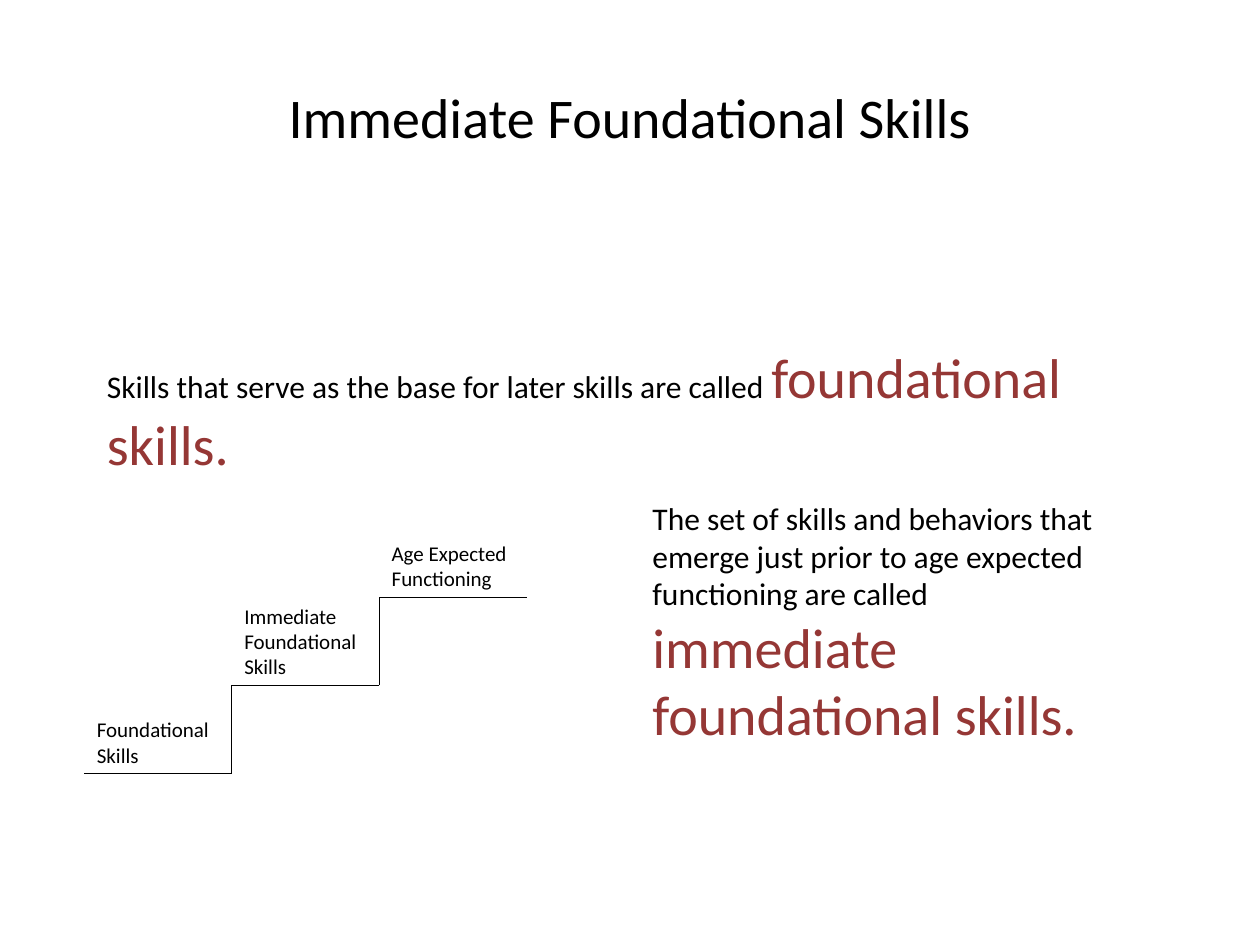
"""Build the slide that explains immediate foundational skills as a staircase."""
from dataclasses import dataclass

import lxml.etree
import pptx
import pptx.dml.color
import pptx.enum.shapes
import pptx.enum.text
import pptx.oxml.ns
import pptx.slide
import pptx.text.text
import pptx.util

Inches = pptx.util.Inches
Pt = pptx.util.Pt
Anchor = pptx.enum.text.MSO_ANCHOR

FONT = "Calibri"
COLORS = {"text": "000000", "term": "953735", "line": "000000"}
STAIR_LEFT, STAIR_BOTTOM = 0.67, 6.14
TREAD, RISER = 1.17, 0.7
LABEL_WIDTH = 1.25


@dataclass(frozen=True)
class Definition:
    left: float
    top: float
    width: float
    height: float
    lead: str
    term: str


STEPS = [
    ["Foundational Skills"],
    ["Immediate", "Foundational Skills"],
    ["Age Expected", "Functioning"],
]
DEFINITIONS = [
    Definition(0.75, 2.67, 7.83, 1.04,
               "Skills that serve as the base for later skills are called ",
               "foundational skills."),
    Definition(5.08, 3.91, 4.17, 2.79,
               "The set of skills and behaviors that emerge just prior to "
               "age expected functioning are called ",
               "immediate foundational skills."),
]


def rgb(name: str) -> pptx.dml.color.RGBColor:
    """Look up a colour by its role."""
    return pptx.dml.color.RGBColor.from_string(COLORS[name])


def style(font: pptx.text.text.Font, size: int, color: str = "text") -> None:
    """Set typeface, size and colour."""
    font.name = FONT
    font.size = Pt(size)
    font.color.rgb = rgb(color)


def add_frame(slide: pptx.slide.Slide, left: float, top: float, width: float,
              height: float, anchor: Anchor) -> pptx.text.text.TextFrame:
    """Add a wrapping text box and return its frame."""
    frame = slide.shapes.add_textbox(
        Inches(left), Inches(top), Inches(width), Inches(height)).text_frame
    frame.word_wrap = True
    frame.vertical_anchor = anchor
    return frame


def add_title(slide: pptx.slide.Slide, title: str) -> None:
    """Add the centred heading."""
    heading = add_frame(slide, 0.5, 0.3, 9, 1.25, Anchor.MIDDLE).paragraphs[0]
    heading.text = title
    heading.alignment = pptx.enum.text.PP_ALIGN.CENTER
    style(heading.font, 32)


def add_line(slide: pptx.slide.Slide, x1: float, y1: float,
             x2: float, y2: float) -> None:
    """Draw one edge of the staircase."""
    edge = slide.shapes.add_connector(
        pptx.enum.shapes.MSO_CONNECTOR.STRAIGHT,
        Inches(x1), Inches(y1), Inches(x2), Inches(y2))
    edge.line.color.rgb = rgb("line")
    edge.line.width = Pt(0.75)
    lxml.etree.SubElement(edge._element.spPr, pptx.oxml.ns.qn("a:effectLst"))


def add_step(slide: pptx.slide.Slide, index: int, label: list[str]) -> None:
    """Draw a tread, the riser leading up to it, and the label standing on it."""
    left = STAIR_LEFT + index * TREAD
    level = STAIR_BOTTOM - index * RISER
    add_line(slide, left, level, left + TREAD, level)
    if index:
        add_line(slide, left, level + RISER, left, level)
    frame = add_frame(slide, left, level - RISER, LABEL_WIDTH, RISER, Anchor.BOTTOM)
    frame.text = "\n".join(label)
    for paragraph in frame.paragraphs:
        style(paragraph.font, 12)


def add_definition(slide: pptx.slide.Slide, definition: Definition) -> None:
    """Add a sentence that ends in an emphasised term."""
    sentence = add_frame(slide, definition.left, definition.top, definition.width,
                         definition.height, Anchor.TOP).paragraphs[0]
    for words, size, color in ((definition.lead, 18, "text"),
                               (definition.term, 32, "term")):
        run = sentence.add_run()
        run.text = words
        style(run.font, size, color)


def main() -> None:
    """Build and save the slide."""
    deck = pptx.Presentation()
    deck.slide_width, deck.slide_height = Inches(10), Inches(7.5)
    slide = deck.slides.add_slide(deck.slide_layouts[6])
    add_title(slide, "Immediate Foundational Skills")
    for index, label in enumerate(STEPS):
        add_step(slide, index, label)
    for definition in DEFINITIONS:
        add_definition(slide, definition)
    deck.save("out.pptx")


if __name__ == "__main__":
    main()
